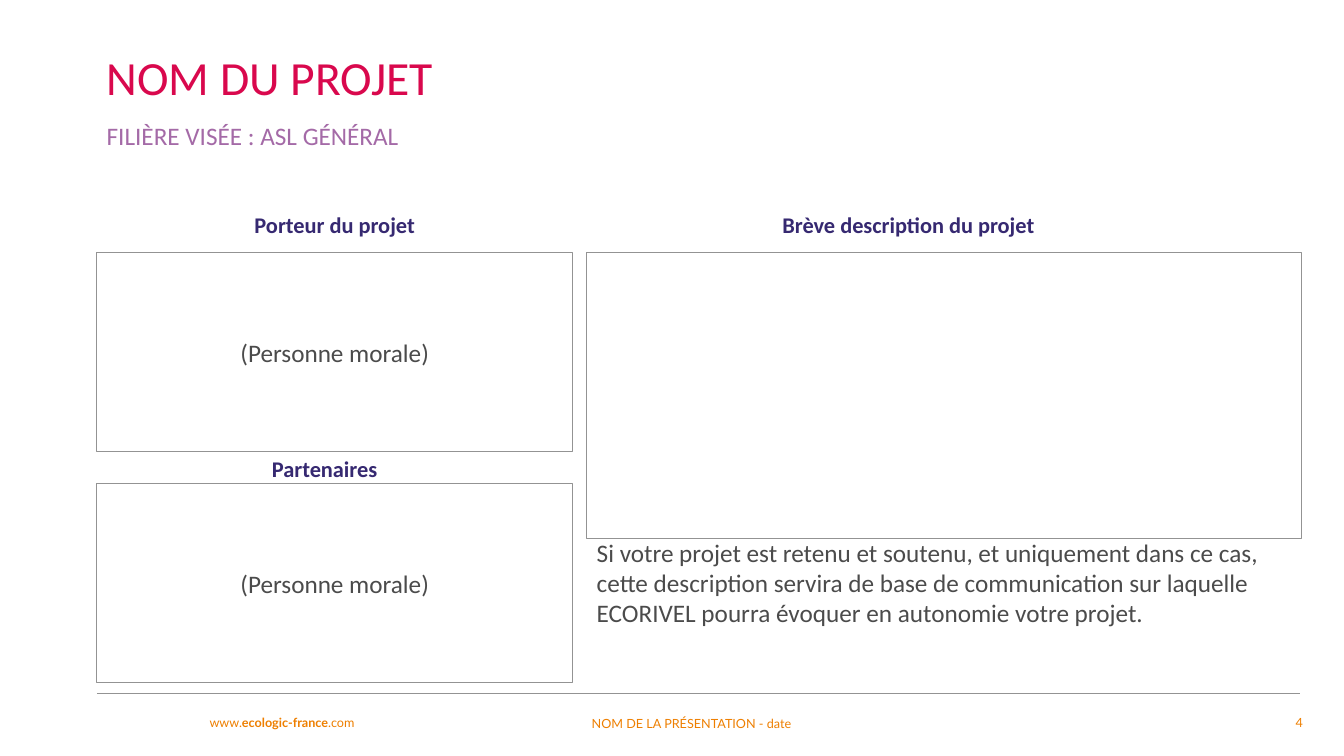
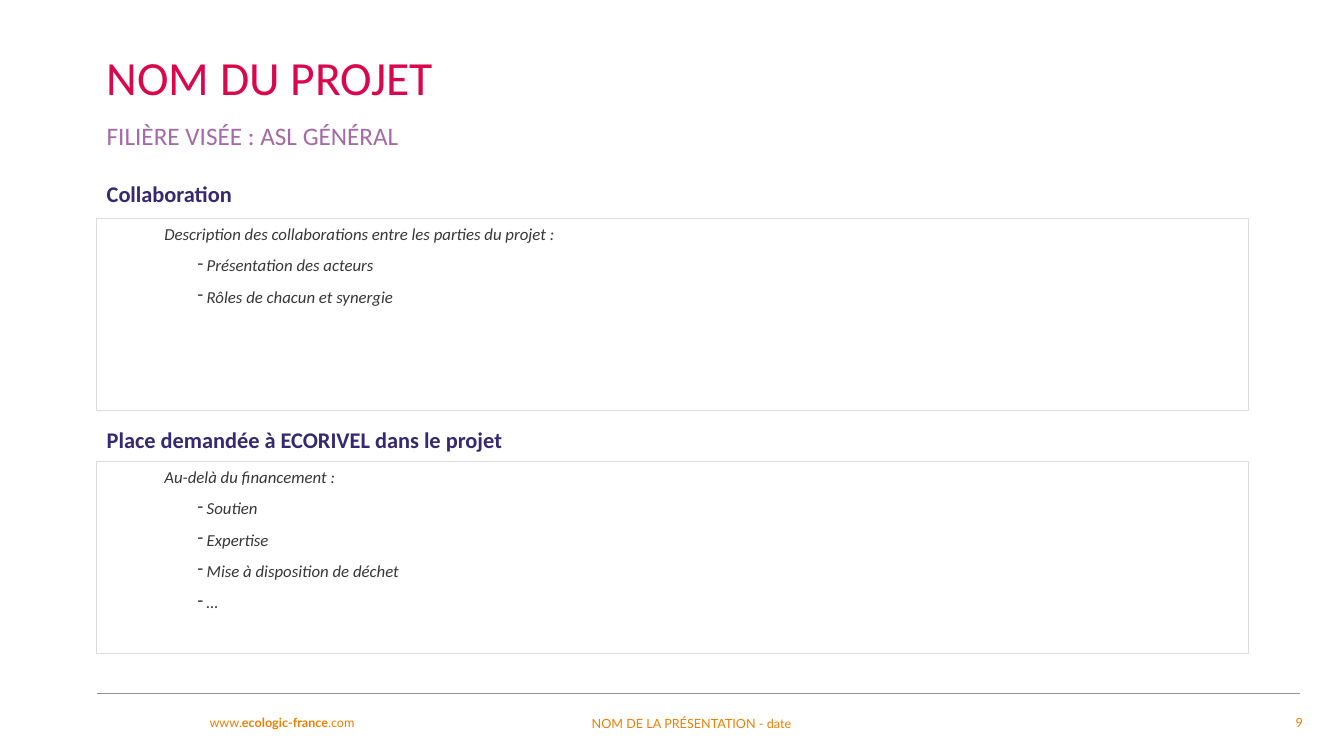
from lxml.etree import SubElement
from pptx import Presentation
from pptx.dml.color import RGBColor
from pptx.enum.shapes import MSO_CONNECTOR, MSO_SHAPE
from pptx.enum.text import MSO_ANCHOR as Anchor, PP_ALIGN as Align
from pptx.oxml.ns import qn
from pptx.util import Inches, Pt

ORANGE = RGBColor(0xEE, 0x7F, 0x00)
CRIMSON = RGBColor(0xD9, 0x08, 0x4D)
MAUVE = RGBColor(0xA4, 0x6A, 0xA7)
NAVY = RGBColor(0x36, 0x29, 0x71)
TEXT_GREY = RGBColor(0x4B, 0x4B, 0x4B)
HINT_GREY = RGBColor(0x37, 0x37, 0x37)
FRAME_GREY = RGBColor(0x93, 0x93, 0x93)
PALE_GREY = RGBColor(0xDB, 0xDB, 0xDB)

BODY_FONT, FOOTER_FONT = "Calibri", "Lato"
LEFT, WIDTH = 0.96, 11.42
COLUMN, HEADING_HEIGHT = 4.72, 0.4


def add_span(para, text, size, color, font=BODY_FONT, bold=False, italic=False):
    """Add one styled run to a paragraph."""
    span = para.add_run()
    span.text = text
    span.font.name, span.font.size = font, Pt(size)
    span.font.bold, span.font.italic = bold, italic
    span.font.color.rgb = color


def add_text(page, box, spans, size, color, font=BODY_FONT, align=Align.LEFT,
             anchor=Anchor.TOP, line_spacing=1.0):
    """Add a one-paragraph text box from (text, bold) spans."""
    frame = page.shapes.add_textbox(*map(Inches, box)).text_frame
    frame.word_wrap = True
    frame.vertical_anchor = anchor
    para = frame.paragraphs[0]
    para.alignment, para.line_spacing = align, line_spacing
    for text, bold in spans:
        add_span(para, text, size, color, font, bold)


def add_heading(page, left, top, width, text, align=Align.LEFT):
    """Add a bold section heading."""
    add_text(page, (left, top, width, HEADING_HEIGHT), [(text, True)], 16, NAVY,
             align=align, anchor=Anchor.MIDDLE, line_spacing=0.9)


def add_frame(page, box, color):
    """Add an unfilled outlined rectangle and return its text frame."""
    shape = page.shapes.add_shape(MSO_SHAPE.RECTANGLE, *map(Inches, box))
    shape.shadow.inherit = False
    shape.fill.background()
    shape.line.color.rgb, shape.line.width = color, Pt(0.75)
    shape.text_frame.word_wrap = True
    return shape.text_frame


def add_footer(page, number):
    """Add the footer rule, address, presentation name and page number."""
    rule = page.shapes.add_connector(
        MSO_CONNECTOR.STRAIGHT, *map(Inches, (LEFT, 6.88, 12.89, 6.88)))
    rule.line.color.rgb, rule.line.width = FRAME_GREY, Pt(0.75)
    SubElement(rule._element.spPr, qn("a:effectLst"))
    address = [("www.", False), ("ecologic-france", True), (".com", False)]
    for box, spans, align in (
            ((1.98, 7.04, 1.78, 0.25), address, Align.LEFT),
            ((5.77, 7.05, 5.24, 0.25),
             [("NOM DE LA PRÉSENTATION - date", False)], Align.LEFT),
            ((12.38, 7.04, 0.64, 0.26), [(str(number), False)], Align.RIGHT)):
        add_text(page, box, spans, 9, ORANGE, FOOTER_FONT, align)


def add_page(deck, number):
    """Add a page with the shared title, subtitle and footer."""
    page = deck.slides.add_slide(deck.slide_layouts[6])
    add_footer(page, number)
    add_text(page, (LEFT, 0.49, WIDTH, 0.62), [("NOM DU PROJET", False)],
             34, CRIMSON, line_spacing=0.9)
    add_text(page, (LEFT, 1.14, WIDTH, 0.4),
             [("FILIÈRE VISÉE : ASL GÉNÉRAL", False)], 18, MAUVE)
    return page


def add_entity(page, top):
    """Add a frame naming the kind of legal entity expected."""
    frame = add_frame(page, (LEFT, top, COLUMN, 1.97), FRAME_GREY)
    frame.vertical_anchor = Anchor.MIDDLE
    para = frame.paragraphs[0]
    para.alignment = Align.CENTER
    add_span(para, "(Personne morale)", 18, TEXT_GREY)


def add_hint_panel(page, top, intro, items):
    """Add a frame with an introduction and a dashed list."""
    frame = add_frame(page, (LEFT, top, WIDTH, 1.9), PALE_GREY)
    frame.margin_left = 0
    frame.vertical_anchor = Anchor.TOP
    for index, text in enumerate([intro, *items]):
        para = frame.add_paragraph() if index else frame.paragraphs[0]
        properties = para._p.get_or_add_pPr()
        properties.set("marL", str(Inches(1.09 if index else 0.67)))
        properties.set("indent", str(Inches(-0.09 if index else 0)))
        if index:
            SubElement(properties, qn("a:buChar")).set("char", "-")
        para.alignment, para.space_after = Align.JUSTIFY, Pt(8)
        add_span(para, text, 12, HINT_GREY, italic=True)


def build_summary(deck):
    """Build the page on the project leader, partners and description."""
    page = add_page(deck, 4)
    for left, top, text in ((LEFT, 2.04, "Porteur du projet"),
                            (0.86, 4.47, "Partenaires"),
                            (6.65, 2.04, "Brève description du projet")):
        add_heading(page, left, top, COLUMN, text, Align.CENTER)
    for top in (2.51, 4.8):
        add_entity(page, top)
    add_frame(page, (5.82, 2.51, 7.09, 2.83), FRAME_GREY)
    notice = ("Si votre projet est retenu et soutenu, et uniquement dans ce cas, "
              "cette description servira de base de communication sur laquelle "
              "ECORIVEL pourra évoquer en autonomie votre projet.")
    add_text(page, (5.82, 5.28, 7.18, 1.31), [(notice, False)], 18, TEXT_GREY)


def build_collaboration(deck):
    """Build the page on collaboration and requested support."""
    page = add_page(deck, 9)
    add_heading(page, LEFT, 1.74, WIDTH, "Collaboration")
    add_hint_panel(page, 2.17,
                   "Description des collaborations entre les parties du projet :",
                   ["Présentation des acteurs", "Rôles de chacun et synergie"])
    add_heading(page, LEFT, 4.18, WIDTH, "Place demandée à ECORIVEL dans le projet")
    add_hint_panel(page, 4.58, "Au-delà du financement :",
                   ["Soutien", "Expertise", "Mise à disposition de déchet", "…"])


def main():
    """Build and save the deck."""
    deck = Presentation()
    deck.slide_width, deck.slide_height = Inches(13.33), Inches(7.5)
    build_summary(deck)
    build_collaboration(deck)
    deck.save("out.pptx")


if __name__ == "__main__":
    main()
